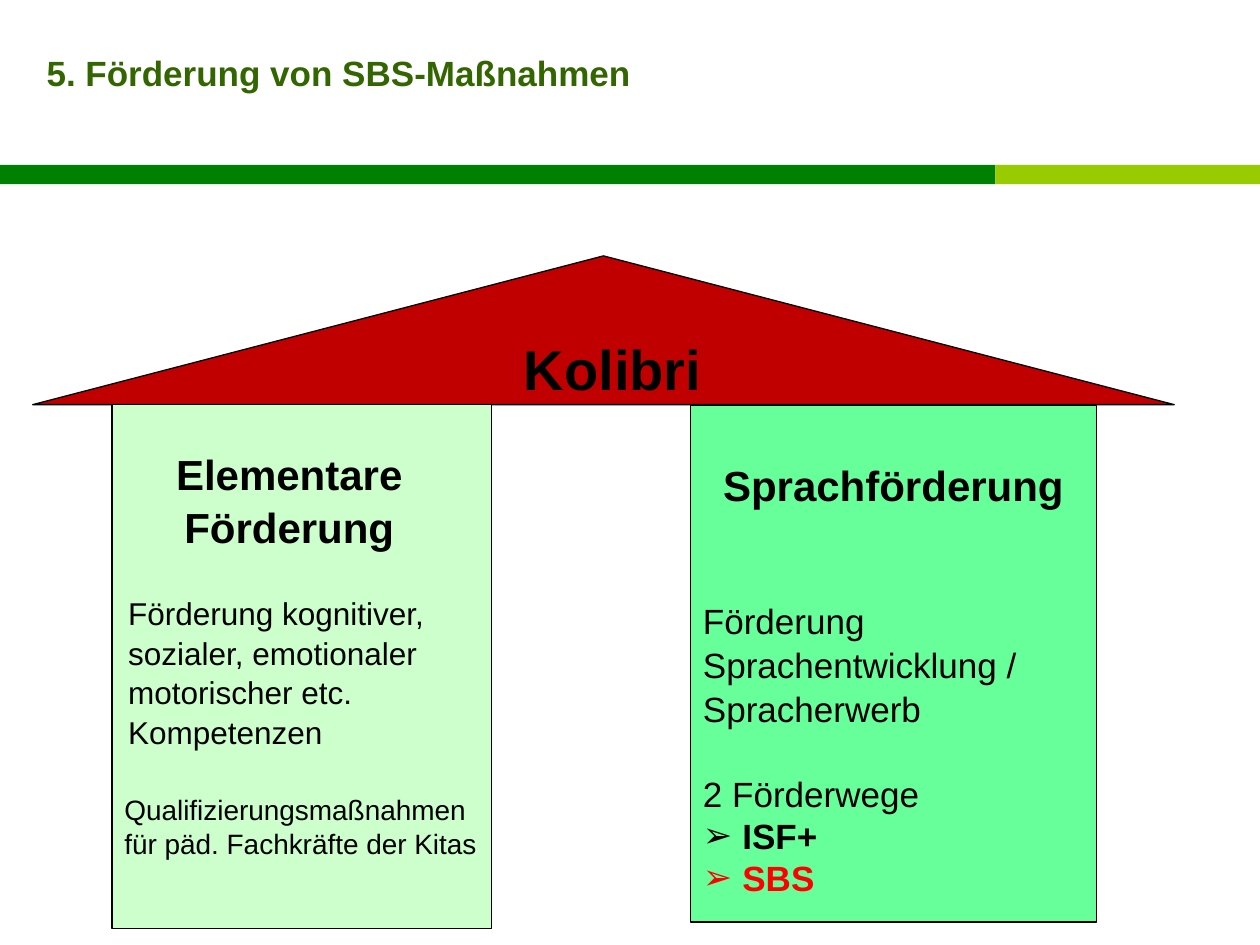
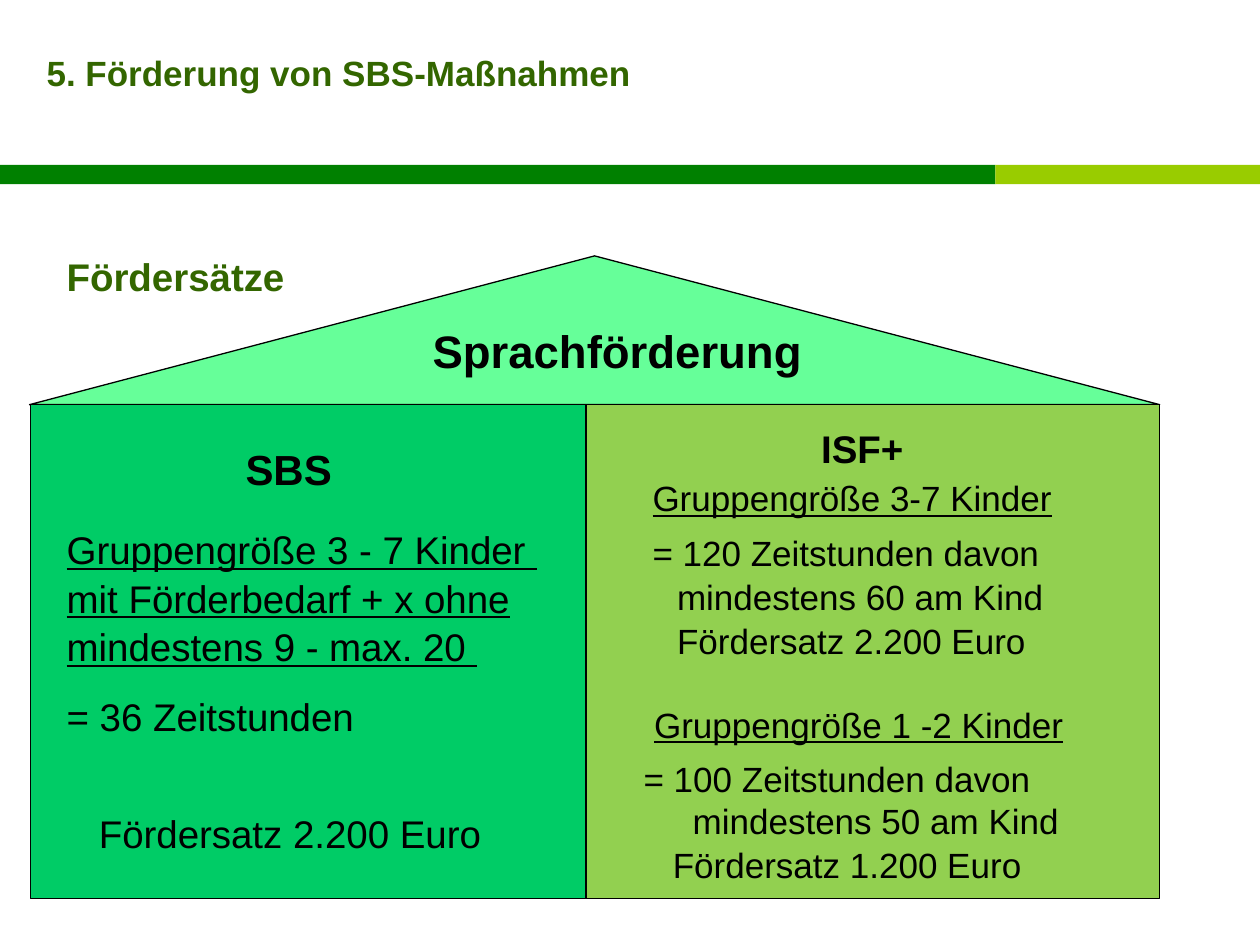
from dataclasses import dataclass
from typing import NamedTuple

from lxml import etree
from pptx import Presentation
from pptx.dml.color import RGBColor
from pptx.enum import shapes, text
from pptx.oxml.ns import qn
from pptx.util import Pt

FONT = "Arial"
BLACK, RED = "000000", "FF0000"
TITLE_GREEN, BAND_GREEN, BAND_LIME = "336600", "008000", "99CC00"
MINT = "66FF99"
LOOSE = 1.05
SLIDE_WIDTH, SLIDE_HEIGHT = 720, 540
BAND_SPLIT = 0.79 * SLIDE_WIDTH
EAVES = 231.2
TITLE = "5. Förderung von SBS-Maßnahmen"
RECTANGLE = shapes.MSO_SHAPE.RECTANGLE
TRIANGLE = shapes.MSO_SHAPE.ISOSCELES_TRIANGLE


class Area(NamedTuple):
    left: float
    top: float
    width: float
    height: float

    def lengths(self) -> list[Pt]:
        return [Pt(value) for value in self]


@dataclass
class Block:
    kind: shapes.MSO_SHAPE
    area: Area
    fill: str
    outlined: bool = True
    apex: float | None = None


class Line(NamedTuple):
    """A paragraph and the format that differs from the rest of its box."""
    wording: str
    style: dict = {}


BANDS = [
    Block(RECTANGLE, Area(0, 94.3, BAND_SPLIT, 11), BAND_GREEN, outlined=False),
    Block(RECTANGLE, Area(BAND_SPLIT, 94.3, SLIDE_WIDTH - BAND_SPLIT, 11),
          BAND_LIME, outlined=False),
]


def colour(value: str) -> RGBColor:
    return RGBColor.from_string(value)


def draw_block(slide, block: Block) -> None:
    shape = slide.shapes.add_shape(block.kind, *block.area.lengths())
    shape.shadow.inherit = False
    shape.fill.solid()
    shape.fill.fore_color.rgb = colour(block.fill)
    if block.apex is not None:
        shape.adjustments[0] = block.apex
    if block.outlined:
        shape.line.color.rgb = colour(BLACK)
        shape.line.width = Pt(0.75)
    else:
        shape.line.fill.background()


def write(paragraph, wording: str, *, size: float, color: str = BLACK,
          bold: bool = False, underline: bool = False, centred: bool = False,
          spacing: float = LOOSE, after: float = 0, left: float = 0,
          hanging: float = 0, bullet: str = "") -> None:
    paragraph.text = wording
    paragraph.alignment = text.PP_ALIGN.CENTER if centred else text.PP_ALIGN.LEFT
    paragraph.line_spacing = spacing
    paragraph.space_before = Pt(0)
    paragraph.space_after = Pt(after)
    properties = paragraph._p.get_or_add_pPr()
    properties.set("marL", str(Pt(left)))
    properties.set("indent", str(-Pt(hanging)))
    if bullet:
        etree.SubElement(properties, qn("a:buFont"), typeface=FONT)
        etree.SubElement(properties, qn("a:buChar"), char=bullet)
    for run in paragraph.runs:
        font = run.font
        font.name, font.size = FONT, Pt(size)
        font.bold, font.underline = bold, underline
        font.color.rgb = colour(color)


def fill_frame(frame, *lines: Line, **shared) -> None:
    frame.word_wrap = True
    frame.auto_size = text.MSO_AUTO_SIZE.NONE
    frame.vertical_anchor = text.MSO_ANCHOR.TOP
    for index, line in enumerate(lines):
        paragraph = frame.add_paragraph() if index else frame.paragraphs[0]
        write(paragraph, line.wording, **{**shared, **line.style})


def add_text(slide, area: Area, *lines: Line, **shared) -> None:
    box = slide.shapes.add_textbox(*area.lengths())
    fill_frame(box.text_frame, *lines, **shared)


def start_slide(deck, house: list[Block]):
    """Add a slide with title and bands, then the house built from blocks."""
    slide = deck.slides.add_slide(deck.slide_layouts[5])
    title = slide.shapes.title
    title.left, title.top, title.width, title.height = Area(19.4, 25.9, 459.4, 51).lengths()
    fill_frame(title.text_frame, Line(TITLE), size=20, color=TITLE_GREEN,
               bold=True, spacing=1)
    for block in BANDS + house:
        draw_block(slide, block)
    return slide


def build_programme(deck) -> None:
    slide = start_slide(deck, [
        Block(TRIANGLE, Area(18.7, 146.2, 652.3, 85), "C00000", apex=0.5),
        Block(RECTANGLE, Area(64, EAVES, 216.7, 299.5), "CCFFCC"),
        Block(RECTANGLE, Area(394.6, EAVES + 0.6, 231.8, 295.2), MINT),
    ])
    add_text(slide, Area(292.3, 185.8, 130.3, 41), Line("Kolibri"), size=32, bold=True)
    add_text(slide, Area(67, 251.3, 196.6, 64), Line("Elementare"), Line("Förderung"),
             size=24, bold=True, centred=True)
    add_text(slide, Area(64, 449.3, 228.2, 46),
             Line("Qualifizierungsmaßnahmen für päd. Fachkräfte der Kitas"),
             size=16, spacing=1)
    add_text(slide, Area(66.2, 334.8, 242.6, 64),
             Line("Förderung kognitiver, sozialer, emotionaler motorischer etc. Kompetenzen"),
             size=18)
    add_text(slide, Area(403.2, 257.8, 214.6, 64), Line("Sprachförderung"),
             size=24, bold=True, centred=True)
    add_text(slide, Area(394.6, 337.7, 239.8, 64), Line("Förderung"),
             Line("Sprachentwicklung / Spracherwerb"), size=20)
    route = dict(bold=True, bullet="➢", left=22.5, hanging=22.5)
    add_text(slide, Area(394.6, 437.8, 246.2, 80), Line("2 Förderwege"),
             Line("ISF+", route), Line("SBS", {**route, "color": RED}),
             size=20, spacing=1)


def build_rates(deck) -> None:
    slide = start_slide(deck, [
        Block(TRIANGLE, Area(16.9, 146.2, 645.8, 85), MINT, apex=0.5),
        Block(RECTANGLE, Area(17.3, EAVES, 317.5, 282.2), "00CC66"),
        Block(RECTANGLE, Area(334.8, EAVES, 327.6, 282.2), "92D050"),
    ])
    add_text(slide, Area(31, 139.7, 567.4, 39.6), Line("Fördersätze"),
             size=22, bold=True, color=TITLE_GREEN)
    add_text(slide, Area(187.9, 179.3, 329.8, 41), Line("Sprachförderung"),
             size=26, bold=True, centred=True)
    add_text(slide, Area(133.2, 248.4, 107.3, 42.5), Line("SBS"), size=24, bold=True)
    add_text(slide, Area(462.2, 238.3, 108, 33.8), Line("ISF+"), size=22, bold=True)
    add_text(slide, Area(31, 295.9, 334.8, 200),
             Line("Gruppengröße 3 - 7 Kinder \nmit Förderbedarf + x ohne", {"underline": True}),
             Line("mindestens 9 - max. 20 ", {"underline": True, "after": 12}),
             Line("= 36 Zeitstunden", {"after": 39.5}),
             Line("Fördersatz 2.200 Euro", {"left": 18.4}), size=22)
    add_text(slide, Area(365.8, 267.8, 300.2, 111),
             Line("Gruppengröße 3-7 Kinder", {"underline": True, "after": 6}),
             Line("= 120 Zeitstunden davon mindestens 60 am Kind Fördersatz 2.200 Euro",
                  {"left": 14, "hanging": 14}), size=20)
    add_text(slide, Area(360.7, 397, 345.6, 109),
             Line("Gruppengröße 1 -2 Kinder", {"underline": True, "after": 6, "left": 6}),
             Line("= 100 Zeitstunden davon"),
             Line("mindestens 50 am Kind", {"left": 28, "spacing": 1}),
             Line("Fördersatz 1.200 Euro", {"left": 16.7}), size=20)


def main() -> None:
    deck = Presentation()
    deck.slide_width, deck.slide_height = Pt(SLIDE_WIDTH), Pt(SLIDE_HEIGHT)
    build_programme(deck)
    build_rates(deck)
    deck.save("out.pptx")


if __name__ == "__main__":
    main()
